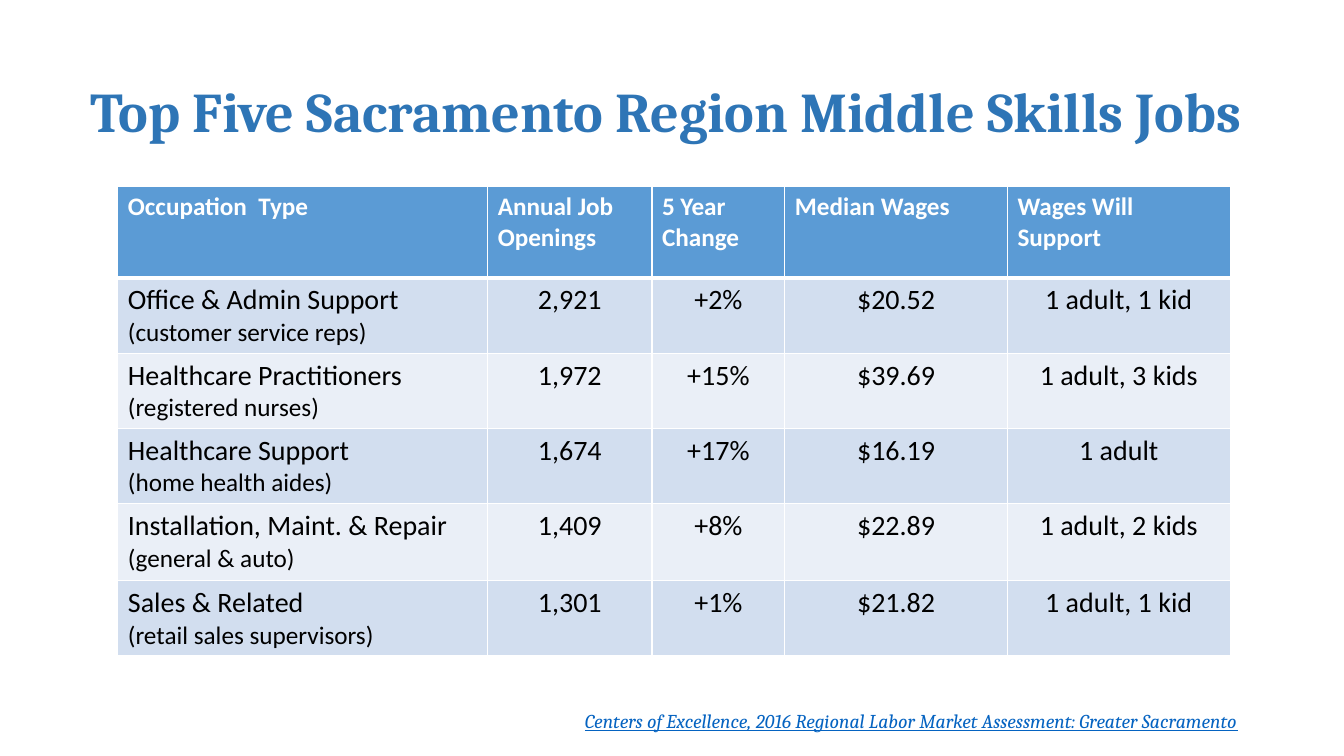
import pptx
import pptx.util
import pptx.dml.color
import pptx.enum.text
import pptx.oxml
import pptx.oxml.ns

Cm = pptx.util.Cm
Pt = pptx.util.Pt
Align = pptx.enum.text.PP_ALIGN


def style(para, size, color, face="Calibri", bold=False):
    font = para.font
    font.size = Pt(size)
    font.name = face
    font.bold = bold
    font.color.rgb = pptx.dml.color.RGBColor.from_string(color)


def border(cell, side, width):
    line = pptx.oxml.parse_xml(
        f'<a:{side} {pptx.oxml.ns.nsdecls("a")} w="{Pt(width)}"><a:solidFill>'
        f'<a:srgbClr val="FFFFFF"/></a:solidFill></a:{side}>')
    cell._tc.get_or_add_tcPr().append(line)


deck = pptx.Presentation()
deck.slide_width = Cm(33.87)
deck.slide_height = Cm(19.05)
slide = deck.slides.add_slide(deck.slide_layouts[5])

title = slide.shapes.title
title.left, title.top, title.width, title.height = Cm(0), Cm(1.9), Cm(33.87), Cm(1.75)
title.text_frame.text = "Top Five Sacramento Region Middle Skills Jobs "
head = title.text_frame.paragraphs[0]
head.alignment = Align.CENTER
style(head, 40, "2E75B6", "Cambria", True)

jobs = [
    ["Occupation  Type", "Annual Job Openings", "5 Year Change", "Median Wages", "Wages Will Support"],
    ["Office & Admin Support\n(customer service reps)", "2,921", "+2%", "$20.52", "1 adult, 1 kid"],
    ["Healthcare Practitioners\n(registered nurses)", "1,972", "+15%", "$39.69", "1 adult, 3 kids"],
    ["Healthcare Support\n(home health aides)", "1,674", "+17%", "$16.19", "1 adult"],
    ["Installation, Maint. & Repair\n(general & auto)", "1,409", "+8%", "$22.89", "1 adult, 2 kids"],
    ["Sales & Related\n(retail sales supervisors)", "1,301", "+1%", "$21.82", "1 adult, 1 kid"],
]
widths = [9.32, 4.14, 3.35, 5.61, 5.61]
heights = [2.31, 1.87, 1.87, 1.87, 1.94, 1.87]
table = slide.shapes.add_table(
    len(jobs), len(widths), Cm(2.97), Cm(4.7), Cm(sum(widths)), Cm(sum(heights))).table
for col, width in zip(table.columns, widths):
    col.width = Cm(width)

for r, job in enumerate(jobs):
    table.rows[r].height = Cm(heights[r])
    fill = "5B9BD5" if r == 0 else ("EAEFF7", "D2DEEF")[r % 2]
    for c, text in enumerate(job):
        cell = table.cell(r, c)
        cell.text = text
        for n, para in enumerate(cell.text_frame.paragraphs):
            if r == 0:
                style(para, 18, "FFFFFF", bold=True)
            else:
                style(para, 18 if n else 20, "000000")
                if c:
                    para.alignment = Align.CENTER
        border(cell, "lnL", 1)
        border(cell, "lnR", 1)
        border(cell, "lnT", 3 if r == 1 else 1)
        border(cell, "lnB", 3 if r == 0 else 1)
        cell.fill.solid()
        cell.fill.fore_color.rgb = pptx.dml.color.RGBColor.from_string(fill)

source = slide.shapes.add_textbox(Cm(1.24), Cm(17.73), Cm(30.2), Cm(0.86)).text_frame
source.word_wrap = True
source.text = "Centers of Excellence, 2016 Regional Labor Market Assessment: Greater Sacramento"
cite = source.paragraphs[0]
cite.alignment = Align.RIGHT
style(cite, 14, "0563C1", "Cambria")
cite.font.italic = True
cite.font.underline = True

deck.save("out.pptx")
